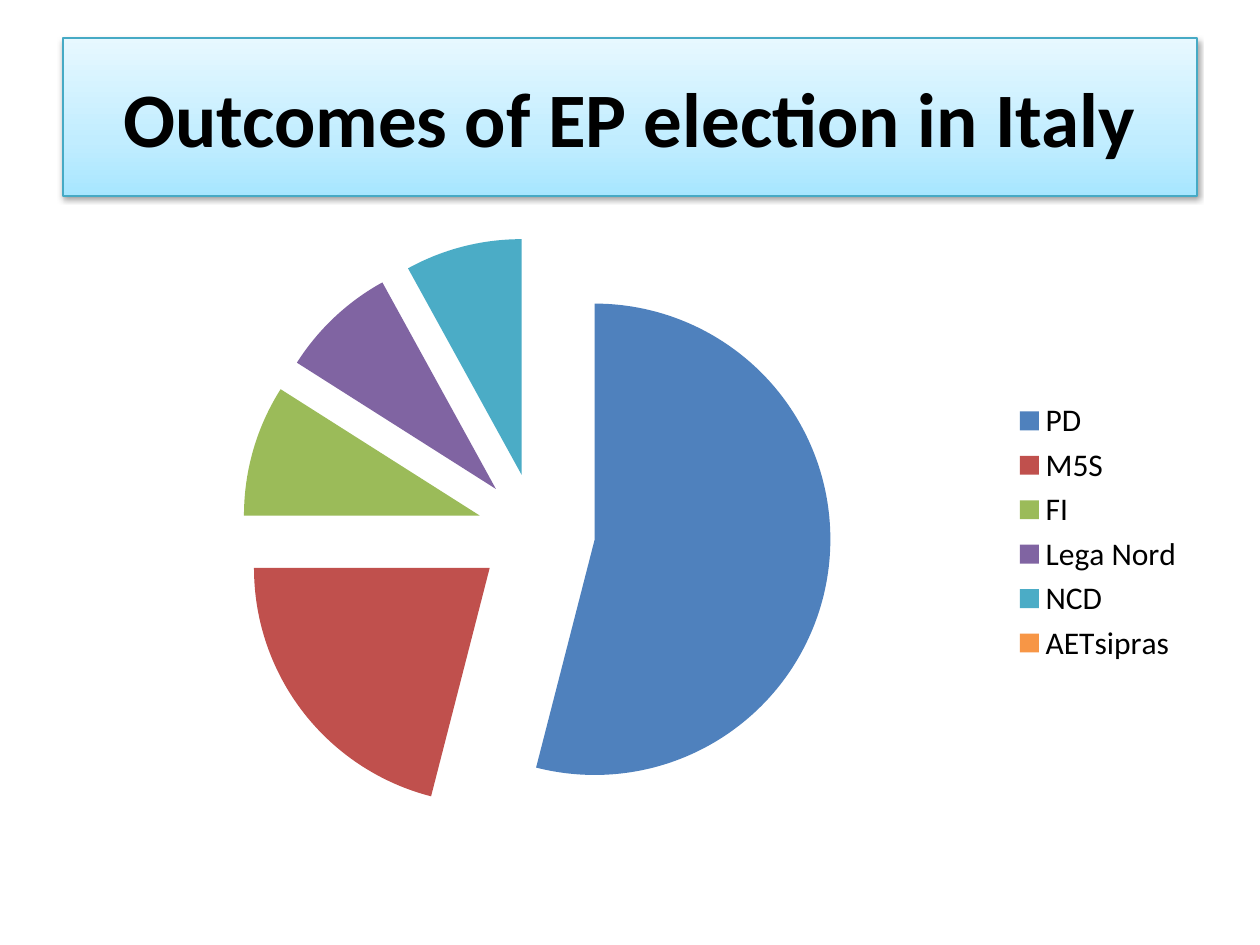
"""Build the slide on the outcomes of the EP election in Italy."""
from lxml.etree import SubElement
from pptx import Presentation
from pptx.chart.data import CategoryChartData
from pptx.dml.color import RGBColor
from pptx.enum.chart import XL_CHART_TYPE, XL_LEGEND_POSITION
from pptx.enum.text import MSO_ANCHOR, PP_ALIGN
from pptx.oxml.ns import qn
from pptx.util import Pt

SCALE = 914400 / 126
BLACK = RGBColor(0x00, 0x00, 0x00)
BORDER = RGBColor(0x46, 0xAA, 0xC5)
STOPS = [
    (0, RGBColor(0xA7, 0xE6, 0xFF)),
    (35, RGBColor(0xC1, 0xED, 0xFF)),
    (100, RGBColor(0xE7, 0xF8, 0xFF)),
]
VOTES = [
    ("PD", 54, RGBColor(0x4F, 0x81, 0xBD)),
    ("M5S", 21, RGBColor(0xC0, 0x50, 0x4D)),
    ("FI", 9, RGBColor(0x9B, 0xBB, 0x59)),
    ("Lega Nord", 8, RGBColor(0x80, 0x64, 0xA2)),
    ("NCD", 8, RGBColor(0x4B, 0xAC, 0xC6)),
    ("AETsipras", None, RGBColor(0xF7, 0x96, 0x46)),
]


def px(num):
    return round(num * SCALE)


def style(item, **form):
    for name, value in form.items():
        setattr(item, name, value)


def node(parent, tag, **attrs):
    return SubElement(parent, qn(tag), {key: str(val) for key, val in attrs.items()})


def add_fade(shape):
    grad = node(shape._element.spPr, "a:gradFill", rotWithShape=1)
    stops = node(grad, "a:gsLst")
    for pos, color in STOPS:
        stop = node(stops, "a:gs", pos=pos * 1000)
        node(stop, "a:srgbClr", val=color)
    node(grad, "a:lin", ang=16200000, scaled=1)


def add_shade(shape):
    effects = node(shape._element.spPr, "a:effectLst")
    shade = node(effects, "a:outerShdw", blurRad=40000, dist=20000,
                 dir=5400000, rotWithShape=0)
    color = node(shade, "a:srgbClr", val=BLACK)
    node(color, "a:alpha", val=38000)


def add_title(slide, text):
    title = slide.shapes.title
    style(title, left=px(63), top=px(38), width=px(1134), height=px(158))
    add_fade(title)
    style(title.line, width=Pt(0.75))
    title.line.color.rgb = BORDER
    add_shade(title)
    frame = title.text_frame
    style(frame, text=text, word_wrap=True, vertical_anchor=MSO_ANCHOR.MIDDLE)
    para = frame.paragraphs[0]
    para.alignment = PP_ALIGN.CENTER
    font = para.runs[0].font
    style(font, name="Calibri", size=Pt(44), bold=True)
    font.color.rgb = BLACK


def add_pie(slide):
    data = CategoryChartData()
    data.categories = [name for name, _, _ in VOTES]
    data.add_series("Series 1", [share for _, share, _ in VOTES])
    chart = slide.shapes.add_chart(
        XL_CHART_TYPE.PIE, px(63), px(220), px(1134), px(624), data).chart
    style(chart, has_title=False, has_legend=True)
    style(chart.legend, position=XL_LEGEND_POSITION.RIGHT, include_in_layout=False)
    style(chart.font, name="Calibri", size=Pt(18))
    chart.font.color.rgb = BLACK
    plot = chart.plots[0]
    plot.vary_by_categories = True
    series = plot.series[0]
    for index, (_, _, color) in enumerate(VOTES):
        fill = series.points[index].format.fill
        fill.solid()
        fill.fore_color.rgb = color
    burst = node(series._element, "c:explosion", val=25)
    series._element.find(qn("c:dPt")).addprevious(burst)


def main():
    deck = Presentation()
    style(deck, slide_width=px(1260), slide_height=px(945))
    slide = deck.slides.add_slide(deck.slide_layouts[5])
    add_title(slide, "Outcomes of EP election in Italy")
    add_pie(slide)
    deck.save("out.pptx")


if __name__ == "__main__":
    main()
